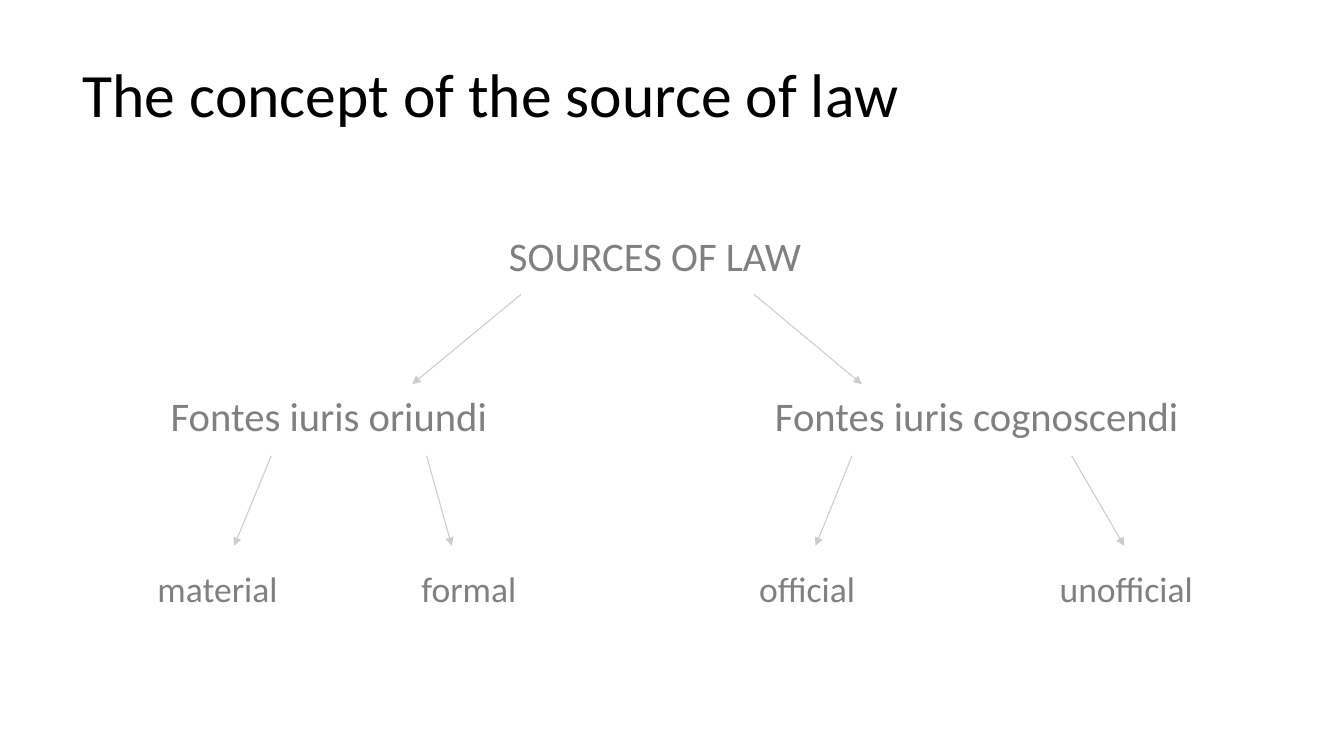
"""Builds a slide with a tree of the sources of law."""
from lxml import etree
from pptx import Presentation, util as u
from pptx.dml import color
from pptx.enum import shapes, text
from pptx.oxml import ns

BLACK, GREY, PALE = "000000", "808080", "CCCCCC"
LEFT, CENTRE = text.PP_ALIGN.LEFT, text.PP_ALIGN.CENTER
TOP, MIDDLE = text.MSO_ANCHOR.TOP, text.MSO_ANCHOR.MIDDLE
LABEL_INSETS = (6.5, 5, 6.5, 2.9)


def rgb(value):
    """Turn a hex string into a colour."""
    return color.RGBColor.from_string(value)


def apply(target, values):
    """Set each named attribute on the target."""
    for name, value in values.items():
        setattr(target, name, value)


def write(slide, box, words, size, align=CENTRE, ink=GREY, insets=LABEL_INSETS,
          anchor=TOP, wrap=False, paragraph_format=None):
    """Place one line of text in a box given in points."""
    frame = slide.shapes.add_textbox(*map(u.Pt, box)).text_frame
    sides = ("margin_left", "margin_top", "margin_right", "margin_bottom")
    apply(frame, dict(zip(sides, map(u.Pt, insets))))
    apply(frame, {"word_wrap": wrap, "vertical_anchor": anchor})
    line = frame.paragraphs[0]
    apply(line, {"alignment": align, **(paragraph_format or {})})
    run = line.add_run()
    run.text = words
    apply(run.font, {"name": "Calibri", "size": u.Pt(size)})
    run.font.color.rgb = rgb(ink)


def arrow(slide, start, end):
    """Draw a thin arrow between two points."""
    link = slide.shapes.add_connector(
        shapes.MSO_CONNECTOR.STRAIGHT, *map(u.Pt, (*start, *end)))
    link.line.width = u.Pt(0.75)
    link.line.color.rgb = rgb(PALE)
    etree.SubElement(link.line._get_or_add_ln(), ns.qn("a:tailEnd"), type="triangle")
    etree.SubElement(link._element.spPr, ns.qn("a:effectLst"))


def title(slide, box):
    """Write the slide title in its box."""
    write(slide, box, "The concept of the source of law", 44, LEFT, BLACK,
          (7.2, 1.4, 7.2, 3.6), MIDDLE, True, {"line_spacing": 0.9})


def root(slide, box):
    """Write the top of the tree and its two arrows."""
    left, top, width, height = box
    write(slide, box, "SOURCES OF LAW", 29, insets=(0, 1.4, 0, 0), anchor=MIDDLE,
          wrap=True, paragraph_format={"line_spacing": 0.9, "space_before": u.Pt(10)})
    for tail, head in ((217.4, 139.7), (383.8, 460.8)):
        arrow(slide, (left + tail, top + 78.5), (left + head, top + 142.6))


def branch(slide, box, heading, leaves):
    """Write a heading with arrows down to its leaves."""
    left, top, width, height = box
    write(slide, (left, top, width, 39), heading, 29)
    for leaf, offset, leaf_width, tail, head in leaves:
        arrow(slide, (left + tail, top + 51.3), (left + head, top + 115.6))
        write(slide, (left + offset, top + height - 34.5, leaf_width, 34.5),
              leaf, 25.4, LEFT)


def main():
    """Build and save the slide."""
    deck = Presentation()
    apply(deck, {"slide_width": u.Pt(960), "slide_height": u.Pt(540)})
    slide = deck.slides.add_slide(deck.slide_layouts[6])
    title(slide, (52, 25.5, 615, 90))
    root(slide, (154.8, 131.8, 626.4, 104.4))
    branch(slide, (106, 274.3, 258, 160.2), "Fontes iuris oriundi",
           (("material", 0, 103.7, 87.8, 61.2), ("formal", 188.6, 83.5, 198.7, 216.7)))
    branch(slide, (530.8, 274.3, 334.1, 160.2), "Fontes iuris cognoscendi",
           (("official", 5, 103.7, 77.8, 51.8), ("unofficial", 219.6, 112, 234.7, 272.2)))
    deck.save("out.pptx")


if __name__ == "__main__":
    main()
